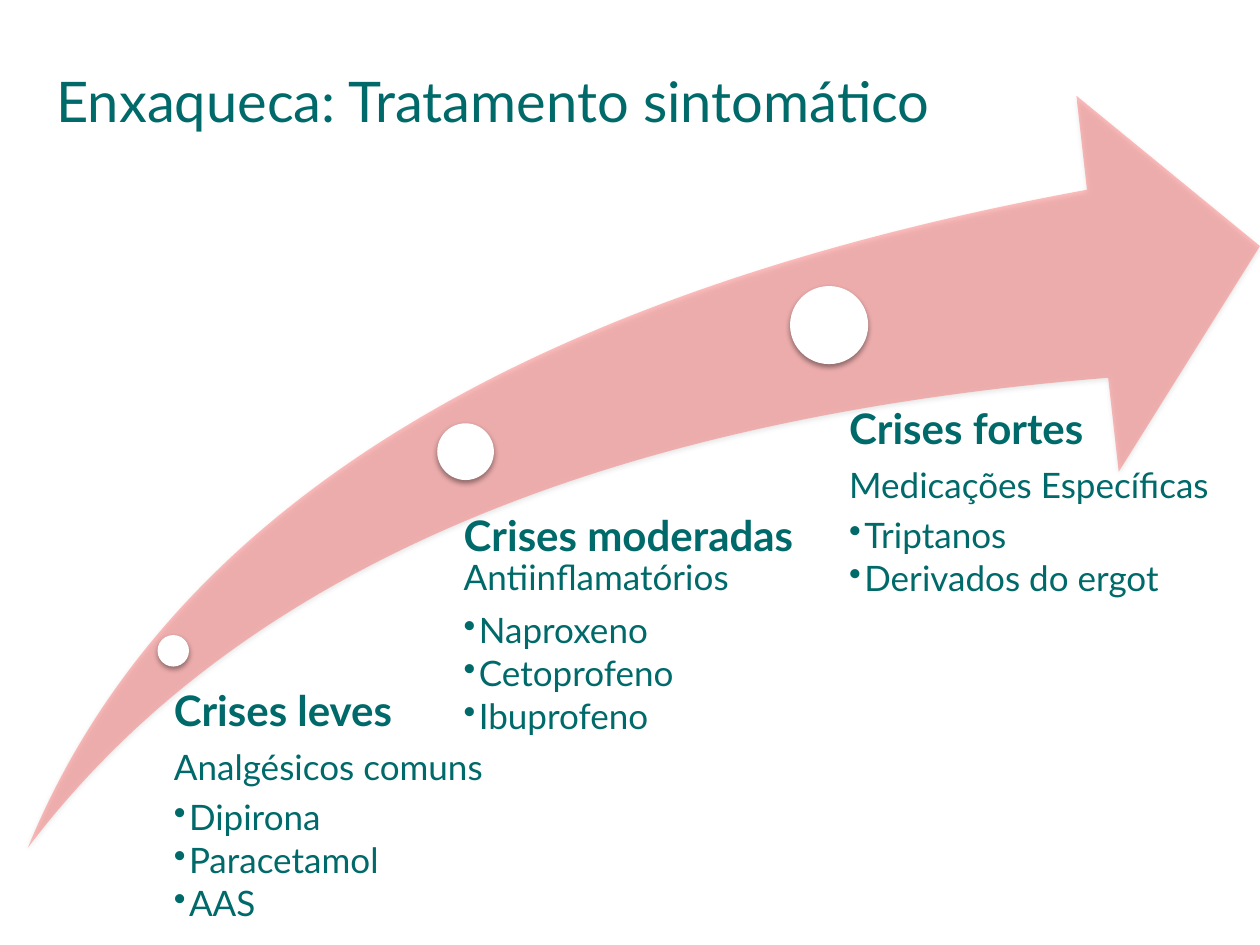
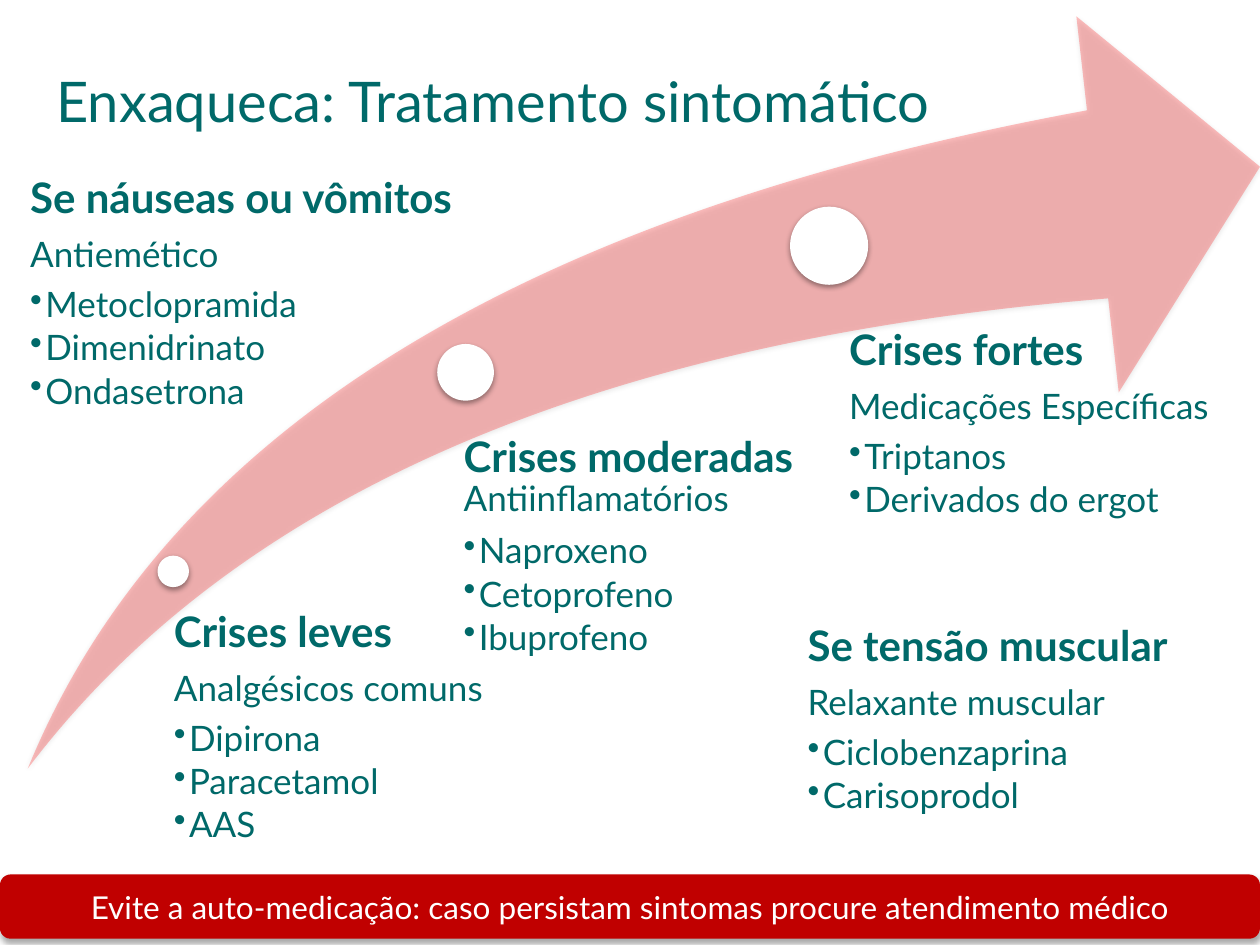
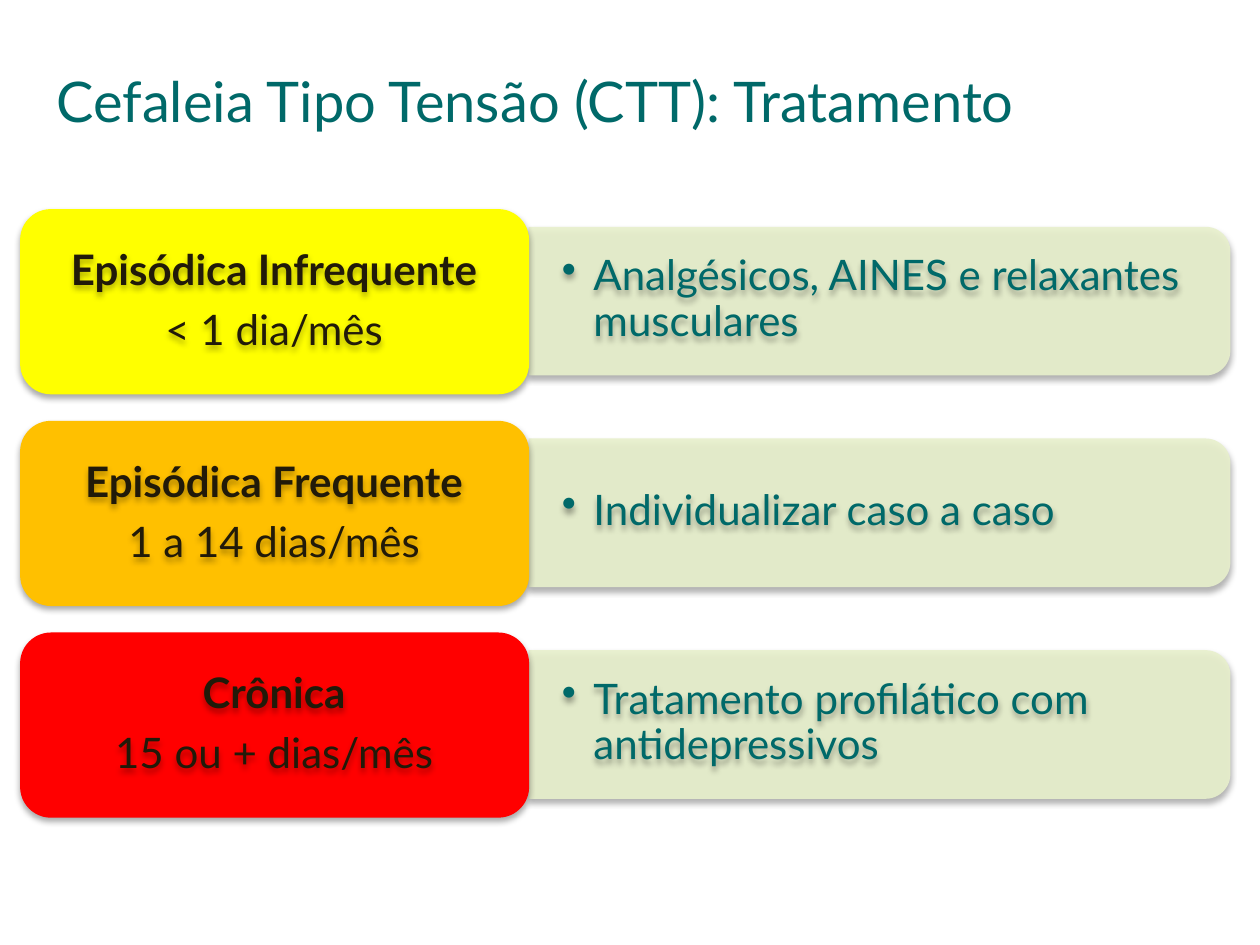
from dataclasses import dataclass
from typing import Optional

from lxml import etree
from pptx import Presentation
from pptx.dml.color import RGBColor
from pptx.enum import shapes, text
from pptx.oxml.ns import qn
from pptx.util import Inches, Pt

# Shared style
FONT = "Lato"
TEAL = RGBColor(0x00, 0x69, 0x69)
DARK = RGBColor(0x21, 0x1A, 0x09)
WHITE = RGBColor(0xFF, 0xFF, 0xFF)
ARROW_RED = RGBColor(0xFF, 0x00, 0x00)
BANNER_RED = RGBColor(0xC0, 0x00, 0x00)
BAND_GREEN = RGBColor(0xE8, 0xF0, 0xCC)
YELLOW = RGBColor(0xFF, 0xFF, 0x00)
ORANGE = RGBColor(0xFF, 0xC0, 0x00)
RED = RGBColor(0xFF, 0x00, 0x00)

LINE_SPACING = 0.9
TEXT_GAP = 0.35  # space after, as a share of the text size
BULLET_GAP = 0.15
HEADING_SIZE = 24
BODY_SIZE = 20
SHAPE = shapes.MSO_SHAPE


@dataclass(frozen=True)
class Box:
    left: float
    top: float
    width: float
    height: float

    def raised(self, rise: float) -> "Box":
        return Box(self.left, self.top - rise, self.width, self.height)

    def lengths(self) -> list:
        return [Inches(v) for v in (self.left, self.top, self.width, self.height)]


@dataclass(frozen=True)
class Shadow:
    alpha: int
    blur: float
    distance: float


@dataclass(frozen=True)
class DrugBlock:
    box: Box
    inset: float
    heading: str
    subtitle: str
    drugs: tuple[str, ...]
    subtitle_inline: bool = False
    fill: Optional[RGBColor] = None


@dataclass(frozen=True)
class Frequency:
    name: str
    days: str
    treatment: str
    color: RGBColor


ARROW_SHADOW = Shadow(38, 3.1, 1.6)
BANNER_SHADOW = Shadow(35, 3.1, 1.8)
ROW_SHADOW = Shadow(32, 3.5, 2.2)

TITLE_BOX = Box(0.35, 0.44, 8.27, 0.71)
ARROW_BOX = Box(0.22, 0.76, 9.78, 5.97)
DOTS = (Box(1.25, 5.04, 0.25, 0.25), Box(3.47, 3.36, 0.45, 0.45), Box(6.27, 2.27, 0.62, 0.62))
CRISES = (
    DrugBlock(Box(6.41, 3.24, 3.59, 3.64), 0.33, "Crises fortes",
              "Medicações Específicas", ("Triptanos", "Derivados do ergot")),
    DrugBlock(Box(3.44, 4.09, 3.02, 2.74), 0.24, "Crises moderadas",
              "Antiinflamatórios", ("Naproxeno", "Cetoprofeno", "Ibuprofeno"),
              subtitle_inline=True),
    DrugBlock(Box(1.25, 5.48, 3.05, 2.02), 0.13, "Crises leves",
              "Analgésicos comuns", ("Dipirona", "Paracetamol", "AAS")),
)
EXTRAS = (
    DrugBlock(Box(0, 1.41, 3.83, 2.34), 0.24, "Se náuseas ou vômitos",
              "Antiemético", ("Metoclopramida", "Dimenidrinato", "Ondasetrona")),
    DrugBlock(Box(6.17, 4.96, 3.83, 2.49), 0.24, "Se tensão muscular",
              "Relaxante muscular", ("Ciclobenzaprina", "Carisoprodol"), fill=WHITE),
)
FREQUENCIES = (
    Frequency("Episódica Infrequente", "< 1 dia/mês",
              "Analgésicos, AINES e relaxantes musculares", YELLOW),
    Frequency("Episódica Frequente", "1 a 14 dias/mês", "Individualizar caso a caso", ORANGE),
    Frequency("Crônica", "15 ou + dias/mês", "Tratamento profilático com antidepressivos", RED),
)


# Shape helpers
def add_shadow(shape, shadow: Shadow) -> None:
    shape.shadow.inherit = False
    effects = shape._element.spPr.find(qn("a:effectLst"))
    outer = etree.SubElement(effects, qn("a:outerShdw"), blurRad=str(Pt(shadow.blur)),
                             dist=str(Pt(shadow.distance)), dir="5400000", rotWithShape="0")
    color = etree.SubElement(outer, qn("a:srgbClr"), val="000000")
    etree.SubElement(color, qn("a:alpha"), val=str(shadow.alpha * 1000))


def add_filled(slide, kind, box: Box, color: RGBColor, shadow: Shadow, opacity: int = 100):
    shape = slide.shapes.add_shape(kind, *box.lengths())
    shape.fill.solid()
    shape.fill.fore_color.rgb = color
    shape.line.fill.background()
    add_shadow(shape, shadow)
    if opacity < 100:
        fill_color = shape._element.spPr.find(qn("a:solidFill"))[0]
        etree.SubElement(fill_color, qn("a:alpha"), val=str(opacity * 1000))
    return shape


def add_text_box(slide, box: Box, anchor=text.MSO_ANCHOR.TOP,
                 insets: tuple[float, ...] = (0.1, 0.05, 0.1, 0.05)):
    shape = slide.shapes.add_textbox(*box.lengths())
    frame = shape.text_frame
    frame.word_wrap = True
    frame.vertical_anchor = anchor
    (frame.margin_left, frame.margin_top,
     frame.margin_right, frame.margin_bottom) = (Inches(v) for v in insets)
    return shape


# Text helpers
def style_font(font, size: float, color: RGBColor, bold: bool = False) -> None:
    font.name = FONT
    font.size = Pt(size)
    font.bold = bold
    font.color.rgb = color


def write(paragraph, words: str, size: float, color: RGBColor = TEAL, bold: bool = False,
          gap: float = TEXT_GAP, bullet_indent: float = 0) -> None:
    paragraph.text = words
    if bullet_indent:
        paragraph.level = 1
        properties = paragraph._p.get_or_add_pPr()
        properties.set("marL", str(Inches(bullet_indent)))
        properties.set("indent", str(-Inches(bullet_indent)))
        etree.SubElement(properties, qn("a:buChar"), char="•")
    paragraph.line_spacing = LINE_SPACING
    paragraph.space_after = Pt(size * gap)
    style_font(paragraph.runs[0].font, size, color, bold)


def write_line(shape, words: str, size: float, color: RGBColor, align) -> None:
    frame = shape.text_frame
    frame.word_wrap = True
    frame.vertical_anchor = text.MSO_ANCHOR.MIDDLE
    paragraph = frame.paragraphs[0]
    paragraph.text = words
    paragraph.alignment = align
    style_font(paragraph.runs[0].font, size, color)


# Slide parts
def add_titled_slide(presentation, title: str):
    slide = presentation.slides.add_slide(presentation.slide_layouts[6])
    write_line(add_text_box(slide, TITLE_BOX), title, 32, TEAL, text.PP_ALIGN.LEFT)
    return slide


def add_drug_block(slide, block: DrugBlock, rise: float = 0) -> None:
    shape = add_text_box(slide, block.box.raised(rise), insets=(block.inset, 0, 0, 0))
    if block.fill is not None:
        shape.fill.solid()
        shape.fill.fore_color.rgb = block.fill
    frame = shape.text_frame
    heading = frame.paragraphs[0]
    write(heading, block.heading, HEADING_SIZE, bold=True)
    if block.subtitle_inline:
        run = heading.add_run()
        run.text = f" {block.subtitle}"
        style_font(run.font, BODY_SIZE, TEAL)
    else:
        write(frame.add_paragraph(), block.subtitle, BODY_SIZE)
    for drug in block.drugs:
        write(frame.add_paragraph(), drug, BODY_SIZE, gap=BULLET_GAP, bullet_indent=0.12)


def add_crisis_slide(presentation, rise: float = 0):
    slide = add_titled_slide(presentation, "Enxaqueca: Tratamento sintomático")
    arrow = add_filled(slide, SHAPE.SWOOSH_ARROW, ARROW_BOX.raised(rise),
                       ARROW_RED, ARROW_SHADOW, opacity=25)
    arrow.adjustments[0] = 0.25
    arrow.adjustments[1] = 0.23
    for dot in DOTS:
        add_filled(slide, SHAPE.OVAL, dot.raised(rise), WHITE, ARROW_SHADOW)
    for block in CRISES:
        add_drug_block(slide, block, rise)
    return slide


def add_frequency_row(slide, frequency: Frequency, top: float) -> None:
    # The band is an upright shape turned a quarter, so its round corners face right
    thickness, length = 1.18, 5.57
    center_x, center_y = 6.98, top + 0.73
    band = add_filled(slide, SHAPE.ROUND_2_SAME_RECTANGLE,
                      Box(center_x - thickness / 2, center_y - length / 2, thickness, length),
                      BAND_GREEN, ROW_SHADOW, opacity=90)
    band.rotation = 90

    treatment = add_text_box(slide, Box(4.19, top + 0.19, 5.51, 1.06),
                             text.MSO_ANCHOR.MIDDLE, (0.27, 0.14, 0.27, 0.14))
    write(treatment.text_frame.paragraphs[0], frequency.treatment, HEADING_SIZE,
          gap=BULLET_GAP, bullet_indent=0.25)
    add_shadow(treatment, ROW_SHADOW)

    add_filled(slide, SHAPE.ROUNDED_RECTANGLE, Box(0.16, top, 4.04, 1.47),
               frequency.color, ROW_SHADOW)
    label = add_text_box(slide, Box(0.25, top + 0.07, 3.85, 1.33), text.MSO_ANCHOR.MIDDLE)
    frame = label.text_frame
    write(frame.paragraphs[0], frequency.name, HEADING_SIZE, DARK, bold=True)
    write(frame.add_paragraph(), frequency.days, HEADING_SIZE, DARK)
    for paragraph in frame.paragraphs:
        paragraph.alignment = text.PP_ALIGN.CENTER
    add_shadow(label, ROW_SHADOW)


def main() -> None:
    presentation = Presentation()
    presentation.slide_width = Inches(10)
    presentation.slide_height = Inches(7.5)

    # Treatment by severity
    add_crisis_slide(presentation)

    # Severity with associated symptoms and warning
    slide = add_crisis_slide(presentation, rise=0.63)
    for block in EXTRAS:
        add_drug_block(slide, block)
    banner = add_filled(slide, SHAPE.ROUNDED_RECTANGLE, Box(0, 6.94, 10, 0.51),
                        BANNER_RED, BANNER_SHADOW)
    write_line(banner, "Evite a auto-medicação: caso persistam sintomas procure atendimento médico",
               18, WHITE, text.PP_ALIGN.CENTER)

    # Tension-type headache by frequency
    slide = add_titled_slide(presentation, "Cefaleia Tipo Tensão (CTT): Tratamento")
    for index, frequency in enumerate(FREQUENCIES):
        add_frequency_row(slide, frequency, top=1.66 + 1.68 * index)

    presentation.save("out.pptx")


if __name__ == "__main__":
    main()
